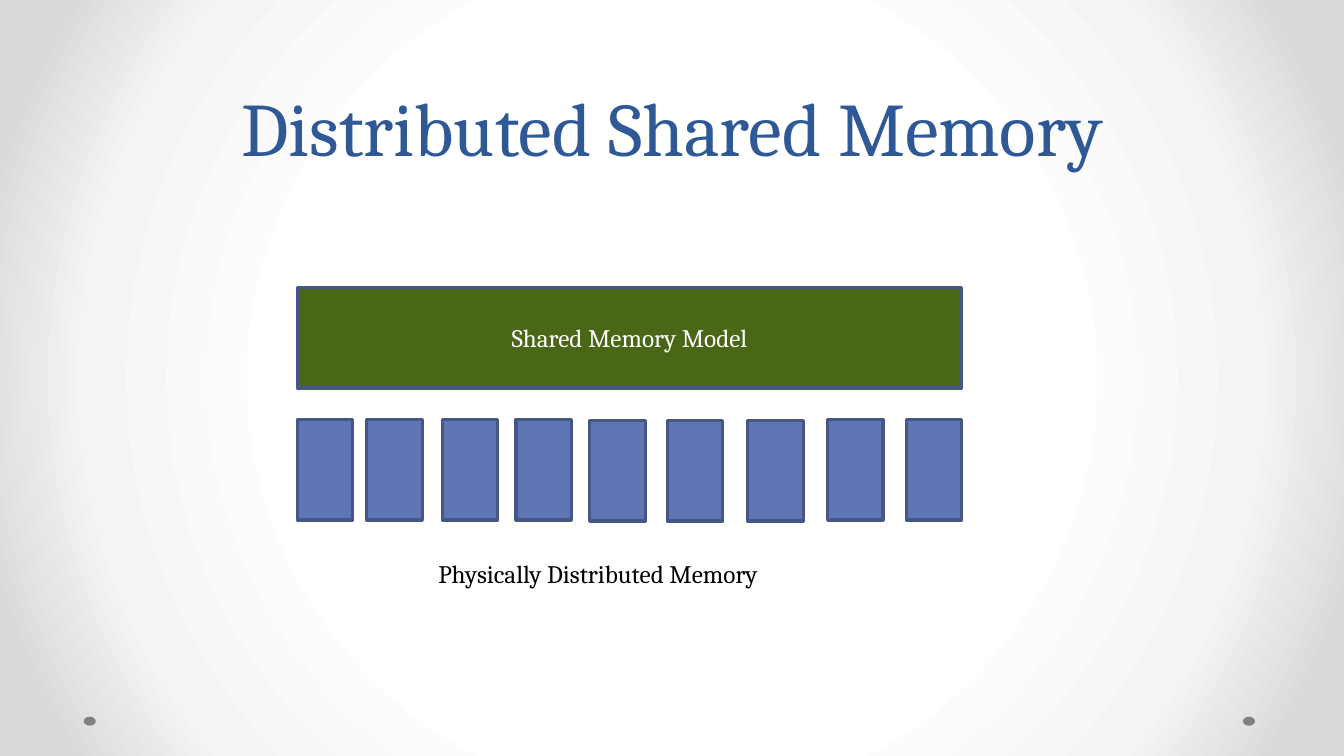
from dataclasses import dataclass

from pptx import Presentation
from pptx.dml.color import RGBColor
from pptx.enum.shapes import MSO_SHAPE as Preset
from pptx.enum.text import MSO_ANCHOR as Anchor, PP_ALIGN as Align
from pptx.oxml import parse_xml
from pptx.oxml.ns import nsdecls
from pptx.shapes.autoshape import Shape
from pptx.slide import Slide
from pptx.util import Pt

FONT = "Cambria"
WHITE = RGBColor(0xFF, 0xFF, 0xFF)
BLACK = RGBColor(0x00, 0x00, 0x00)
GREY = RGBColor(0x80, 0x80, 0x80)
LIGHT_GREY = RGBColor(0xF4, 0xF4, 0xF4)
EDGE_GREY = RGBColor(0xDA, 0xDA, 0xDA)
TITLE_BLUE = RGBColor(0x2F, 0x58, 0x97)
MEMORY_BLUE = RGBColor(0x60, 0x76, 0xB4)
BORDER_BLUE = RGBColor(0x47, 0x57, 0x85)
MODEL_GREEN = RGBColor(0x4A, 0x67, 0x17)

BACKGROUND_STOPS = ((50, WHITE), (76, LIGHT_GREY), (92, EDGE_GREY))
DOT_LEFTS = (59.8, 887.8)
MEMORY_TOP = 299.5
LOWER_MEMORY_TOP = 300.2
MEMORY_POSITIONS = (
    (212.4, MEMORY_TOP),
    (262.1, MEMORY_TOP),
    (316.1, MEMORY_TOP),
    (368.6, MEMORY_TOP),
    (421.2, LOWER_MEMORY_TOP),
    (476.6, LOWER_MEMORY_TOP),
    (534.2, LOWER_MEMORY_TOP),
    (591.1, MEMORY_TOP),
    (647.3, MEMORY_TOP),
)


@dataclass(frozen=True)
class Box:
    left: float
    top: float
    width: float
    height: float

    def lengths(self) -> tuple[Pt, Pt, Pt, Pt]:
        return Pt(self.left), Pt(self.top), Pt(self.width), Pt(self.height)


def set_background(slide: Slide) -> None:
    stops = "".join(
        f'<a:gs pos="{position * 1000}"><a:srgbClr val="{color}"/></a:gs>'
        for position, color in BACKGROUND_STOPS
    )
    background = parse_xml(
        f'<p:bg {nsdecls("p", "a")}><p:bgPr><a:gradFill rotWithShape="1">'
        f'<a:gsLst>{stops}</a:gsLst><a:path path="circle">'
        '<a:fillToRect l="50000" t="50000" r="50000" b="50000"/>'
        "</a:path></a:gradFill><a:effectLst/></p:bgPr></p:bg>"
    )
    slide.element.cSld.insert(0, background)


def add_block(
    slide: Slide,
    box: Box,
    fill: RGBColor,
    preset: Preset = Preset.RECTANGLE,
    border: RGBColor | None = BORDER_BLUE,
) -> Shape:
    shape = slide.shapes.add_shape(preset, *box.lengths())
    shape.shadow.inherit = False
    shape.fill.solid()
    shape.fill.fore_color.rgb = fill
    if border is None:
        shape.line.fill.background()
    else:
        shape.line.color.rgb = border
        shape.line.width = Pt(2.25)
    return shape


def write_text(
    shape: Shape,
    text: str,
    *,
    color: RGBColor,
    size: float = 18,
    align: Align = Align.CENTER,
    anchor: Anchor = Anchor.MIDDLE,
    wrap: bool = True,
    line_spacing: float | None = None,
) -> None:
    frame = shape.text_frame
    frame.word_wrap = wrap
    frame.vertical_anchor = anchor
    paragraph = frame.paragraphs[0]
    paragraph.alignment = align
    if line_spacing is not None:
        paragraph.line_spacing = Pt(line_spacing)
    run = paragraph.add_run()
    run.text = text
    run.font.name = FONT
    run.font.size = Pt(size)
    run.font.color.rgb = color


def main() -> None:
    presentation = Presentation()
    presentation.slide_width = Pt(960)
    presentation.slide_height = Pt(540)
    slide = presentation.slides.add_slide(presentation.slide_layouts[6])
    set_background(slide)

    for left in DOT_LEFTS:
        add_block(slide, Box(left, 511.9, 8.6, 6.5), GREY, Preset.OVAL, None)

    title = slide.shapes.add_textbox(*Box(48, 0, 864, 126).lengths())
    write_text(title, "Distributed Shared Memory", color=TITLE_BLUE, size=54,
               anchor=Anchor.BOTTOM, line_spacing=58)

    for left, top in MEMORY_POSITIONS:
        add_block(slide, Box(left, top, 39.6, 72), MEMORY_BLUE)

    model = add_block(slide, Box(212.4, 205.2, 474.5, 72), MODEL_GREEN)
    write_text(model, "Shared Memory Model", color=WHITE)

    caption = slide.shapes.add_textbox(*Box(306, 395.3, 267.8, 28.8).lengths())
    write_text(caption, "Physically Distributed Memory", color=BLACK,
               align=Align.LEFT, anchor=Anchor.TOP, wrap=False)

    presentation.save("out.pptx")


if __name__ == "__main__":
    main()
